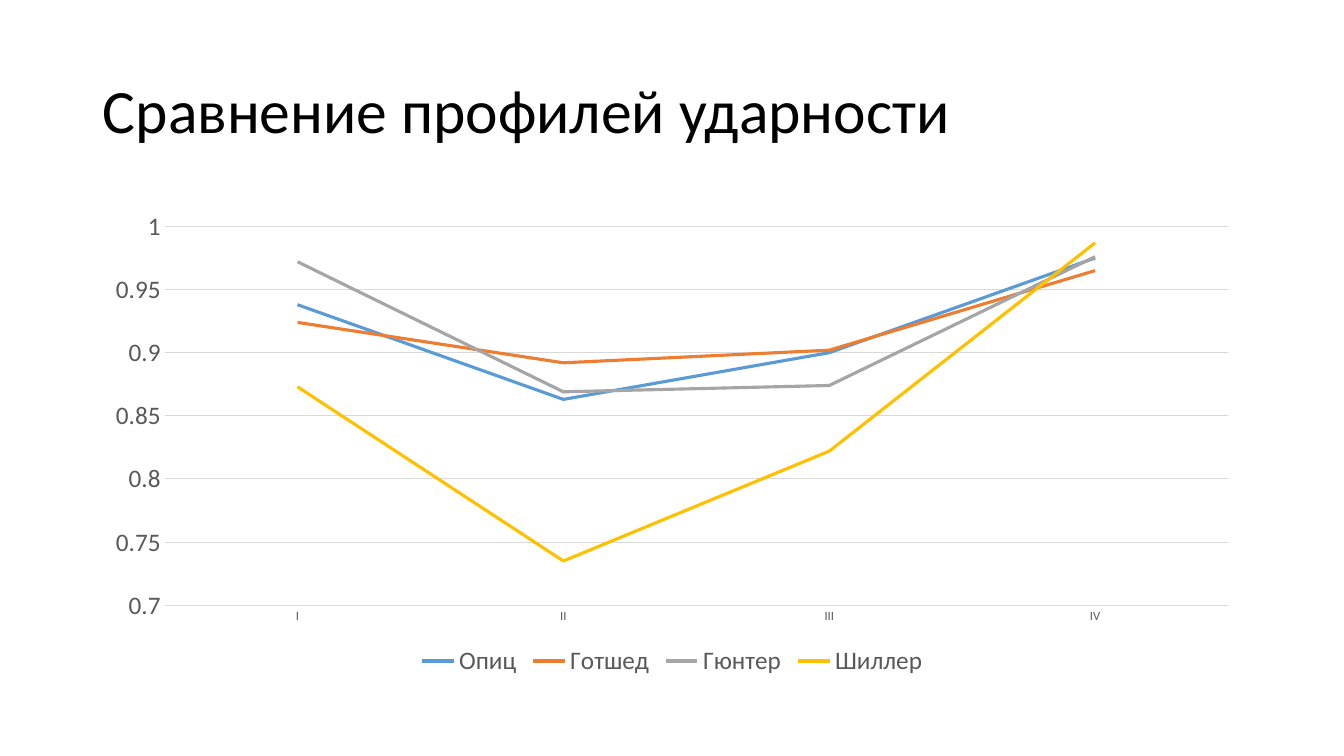
from dataclasses import dataclass

from pptx import Presentation
from pptx import util as u
from pptx.chart.data import CategoryChartData
from pptx.dml.color import RGBColor
from pptx.enum import chart as ch, text


@dataclass(frozen=True)
class Theme:
    font: str = "Calibri"
    title: str = "000000"
    label: str = "595959"
    rule: str = "D9D9D9"
    title_size: float = 44
    label_size: float = 18
    category_size: float = 9
    rule_width: float = 0.75
    curve_width: float = 2.25


THEME = Theme()
WIDTH, HEIGHT = 13.33, 7.5
MARGIN = 0.92
FEET = ["I", "II", "III", "IV"]
# Poet: (curve colour, stress rate on each foot)
POETS = {
    "Опиц": ("5B9BD5", (0.938, 0.863, 0.9, 0.975)),
    "Готшед": ("ED7D31", (0.924, 0.892, 0.902, 0.965)),
    "Гюнтер": ("A5A5A5", (0.972, 0.869, 0.874, 0.976)),
    "Шиллер": ("FFC000", (0.873, 0.735, 0.822, 0.987)),
}


def apply(target, **formats):
    for name, value in formats.items():
        setattr(target, name, value)


def style_font(font, size, color):
    apply(font, name=THEME.font, size=u.Pt(size), bold=False)
    font.color.rgb = RGBColor.from_string(color)


def style_line(line, width, color):
    line.width = u.Pt(width)
    line.color.rgb = RGBColor.from_string(color)


def add_heading(slide, box, wording):
    heading = slide.shapes.title
    apply(heading, **dict(zip(("left", "top", "width", "height"), box)))
    frame = heading.text_frame
    apply(frame, text=wording, word_wrap=True,
          vertical_anchor=text.MSO_ANCHOR.MIDDLE)
    paragraph = frame.paragraphs[0]
    apply(paragraph, line_spacing=0.9, alignment=text.PP_ALIGN.LEFT)
    style_font(paragraph.runs[0].font, THEME.title_size, THEME.title)


def add_profiles(slide, box):
    stress = CategoryChartData()
    stress.categories = FEET
    for poet, (_, rates) in POETS.items():
        stress.add_series(poet, rates)
    profiles = slide.shapes.add_chart(ch.XL_CHART_TYPE.LINE, *box, stress).chart
    apply(profiles, has_title=False, has_legend=True)
    style_font(profiles.font, 10, THEME.title)

    # Curves
    plot = profiles.plots[0]
    plot.vary_by_categories = False
    for curve, (color, _) in zip(plot.series, POETS.values()):
        curve.smooth = False
        curve.marker.style = ch.XL_MARKER_STYLE.NONE
        style_line(curve.format.line, THEME.curve_width, color)

    # Axes
    feet, rate = profiles.category_axis, profiles.value_axis
    for axis, size in ((feet, THEME.category_size), (rate, THEME.label_size)):
        apply(axis, major_tick_mark=ch.XL_TICK_MARK.NONE,
              minor_tick_mark=ch.XL_TICK_MARK.NONE)
        style_font(axis.tick_labels.font, size, THEME.label)
    style_line(feet.format.line, THEME.rule_width, THEME.rule)
    rate.format.line.fill.background()
    apply(rate, minimum_scale=0.7, maximum_scale=1, major_unit=0.05,
          has_major_gridlines=True)
    style_line(rate.major_gridlines.format.line, THEME.rule_width, THEME.rule)

    # Legend
    apply(profiles.legend, position=ch.XL_LEGEND_POSITION.BOTTOM,
          include_in_layout=False)
    style_font(profiles.legend.font, THEME.label_size, THEME.label)


def main():
    deck = Presentation()
    apply(deck, slide_width=u.Inches(WIDTH), slide_height=u.Inches(HEIGHT))
    slide = deck.slides.add_slide(deck.slide_layouts[5])

    def band(top, height):
        lengths = (MARGIN, top, WIDTH - 2 * MARGIN, height)
        return [u.Inches(length) for length in lengths]

    add_heading(slide, band(0.4, 1.45), "Сравнение профилей ударности")
    add_profiles(slide, band(2, 4.76))
    deck.save("out.pptx")


if __name__ == "__main__":
    main()
